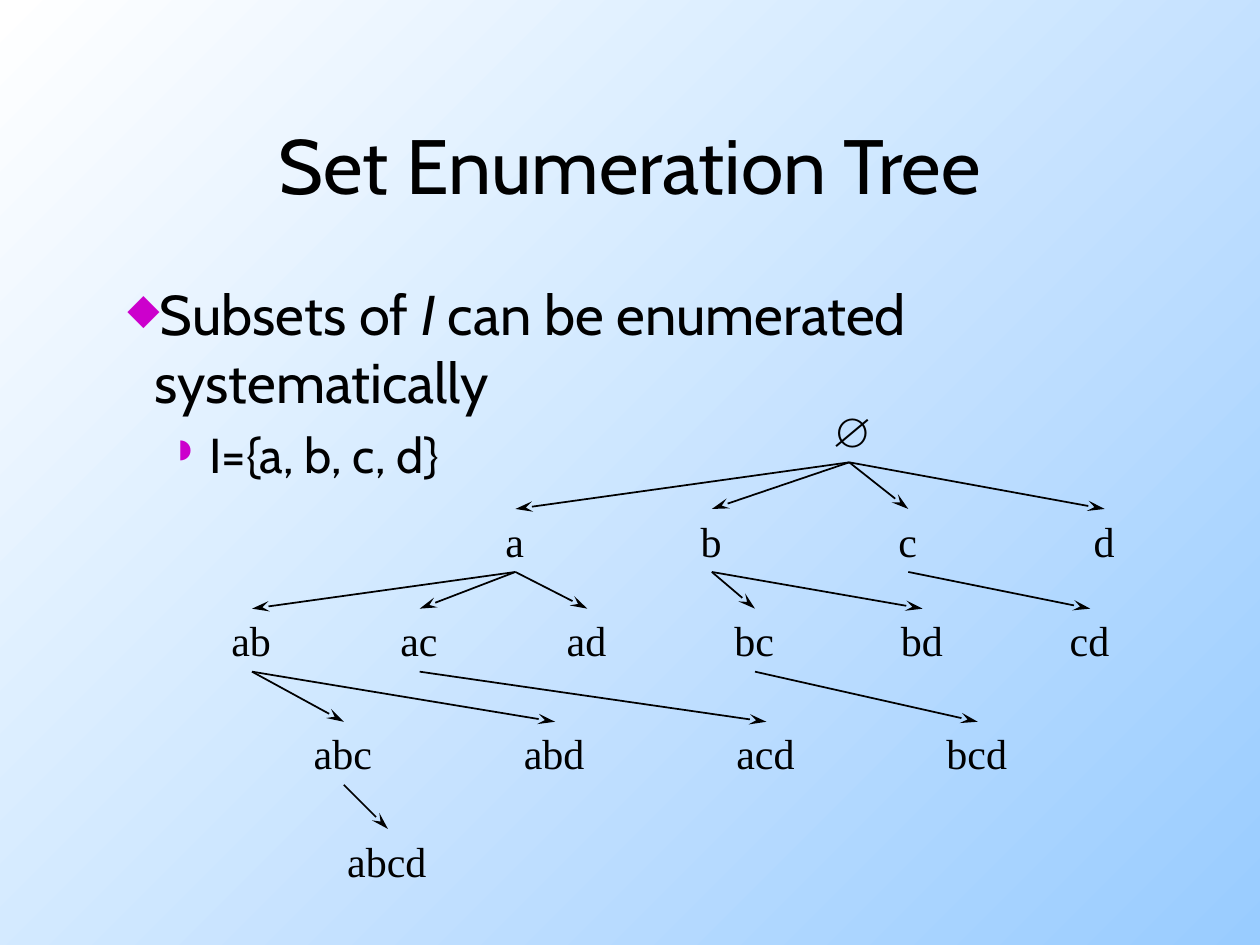
import pptx
import pptx.util
import pptx.dml.color
import pptx.enum.dml
import pptx.enum.shapes
import pptx.enum.text
import pptx.oxml
import pptx.oxml.ns
from pptx.util import Cm

Pt = pptx.util.Pt
RGB = pptx.dml.color.RGBColor
Align = pptx.enum.text.PP_ALIGN
Anchor = pptx.enum.text.MSO_ANCHOR
AutoSize = pptx.enum.text.MSO_AUTO_SIZE

THEME = {
    "ink": RGB(0x00, 0x00, 0x00),
    "bullet": "CC00CC",
    "background": [RGB(0xFF, 0xFF, 0xFF), RGB(0x99, 0xCC, 0xFF)],
    "line": Pt(1),
    "title": {"name": "Cabin", "size": Pt(44), "bold": False},
    "body": {"name": "Cabin", "size": Pt(32)},
    "emphasis": {"name": "Cabin", "size": Pt(32), "italic": True},
    "detail": {"name": "Cabin", "size": Pt(28)},
    "node": {"name": "Times New Roman", "size": Pt(24)},
}


def write(para, text, style):
    span = para.add_run()
    span.text = text
    for name, value in THEME[style].items():
        setattr(span.font, name, value)
    span.font.color.rgb = THEME["ink"]


def append_xml(parent, tag, content=""):
    namespace = pptx.oxml.ns.nsdecls("a")
    name = tag.split()[0]
    parent.append(pptx.oxml.parse_xml(f"<a:{tag} {namespace}>{content}</a:{name}>"))


deck = pptx.Presentation()
deck.slide_width, deck.slide_height = Cm(25.4), Cm(19.05)
page = deck.slides.add_slide(deck.slide_layouts[5])

background = page.background.fill
background.gradient()
background.gradient_angle = 315
for stop, colour, position in zip(background.gradient_stops, THEME["background"], (0, 1)):
    stop.color.rgb = colour
    stop.position = position

title = page.shapes.title
title_format = {"left": Cm(1.9), "top": Cm(1.7), "width": Cm(21.6), "height": Cm(3.18)}
for name, value in title_format.items():
    setattr(title, name, value)
title.text_frame.vertical_anchor = Anchor.MIDDLE
para = title.text_frame.paragraphs[0]
para.alignment = Align.CENTER
write(para, "Set Enumeration Tree", "title")

body = page.shapes.add_textbox(Cm(1.91), Cm(5.52), Cm(21.6), Cm(11.43)).text_frame
body.word_wrap = True
points = [
    (0, "◆", 75, Cm(0.95), Cm(-0.54),
     [("Subsets of ", "body"), ("I ", "emphasis"), ("can be enumerated systematically", "body")]),
    (1, "◗", 55, Cm(2.06), Cm(-0.6), [("I={a, b, c, d}", "detail")]),
]
for level, bullet, bullet_percent, margin, indent, spans in points:
    para = body.add_paragraph() if level else body.paragraphs[0]
    para.level = level
    for text, style in spans:
        write(para, text, style)
    properties = para._p.get_or_add_pPr()
    properties.set("marL", str(margin))
    properties.set("indent", str(indent))
    append_xml(properties, "spcBef", '<a:spcPct val="20000"/>')
    append_xml(properties, "buClr", f'<a:srgbClr val="{THEME["bullet"]}"/>')
    append_xml(properties, f'buSzPct val="{bullet_percent * 1000}"')
    append_xml(properties, f'buChar char="{bullet}"')

node_height = 1.27
node_padding = 0.52
letter_widths = {"∅": 0.7, "a": 0.38, "b": 0.43, "c": 0.38, "d": 0.43}
levels = [
    (8.05, 17.12, 0, ["∅"]),
    (10.26, 10.39, 3.96, ["a", "b", "c", "d"]),
    (12.27, 5.08, 3.38, ["ab", "ac", "ad", "bc", "bd", "cd"]),
    (14.55, 6.93, 4.26, ["abc", "abd", "acd", "bcd"]),
    (16.71, 7.82, 0, ["abcd"]),
]
nodes = {}
for top, first_centre, step, names in levels:
    for index, name in enumerate(names):
        centre = first_centre + index * step
        nodes[name] = centre, top
        width = node_padding + sum(letter_widths[letter] for letter in name)
        box = page.shapes.add_textbox(Cm(centre - width / 2), Cm(top), Cm(width), Cm(node_height))
        box.text_frame.word_wrap = False
        box.text_frame.auto_size = AutoSize.SHAPE_TO_FIT_TEXT
        write(box.text_frame.paragraphs[0], name, "node")

for name, (centre, top) in nodes.items():
    if name == "∅":
        continue
    parent_centre, parent_top = nodes[name[:-1] or "∅"]
    arrow = page.shapes.add_connector(
        pptx.enum.shapes.MSO_CONNECTOR.STRAIGHT,
        Cm(parent_centre), Cm(parent_top + node_height), Cm(centre), Cm(top))
    arrow.line.width = THEME["line"]
    arrow.line.color.rgb = THEME["ink"]
    append_xml(arrow.line._get_or_add_ln(), 'tailEnd type="stealth" w="med" len="lg"')
    append_xml(arrow._element.spPr, "effectLst")

deck.save("out.pptx")
